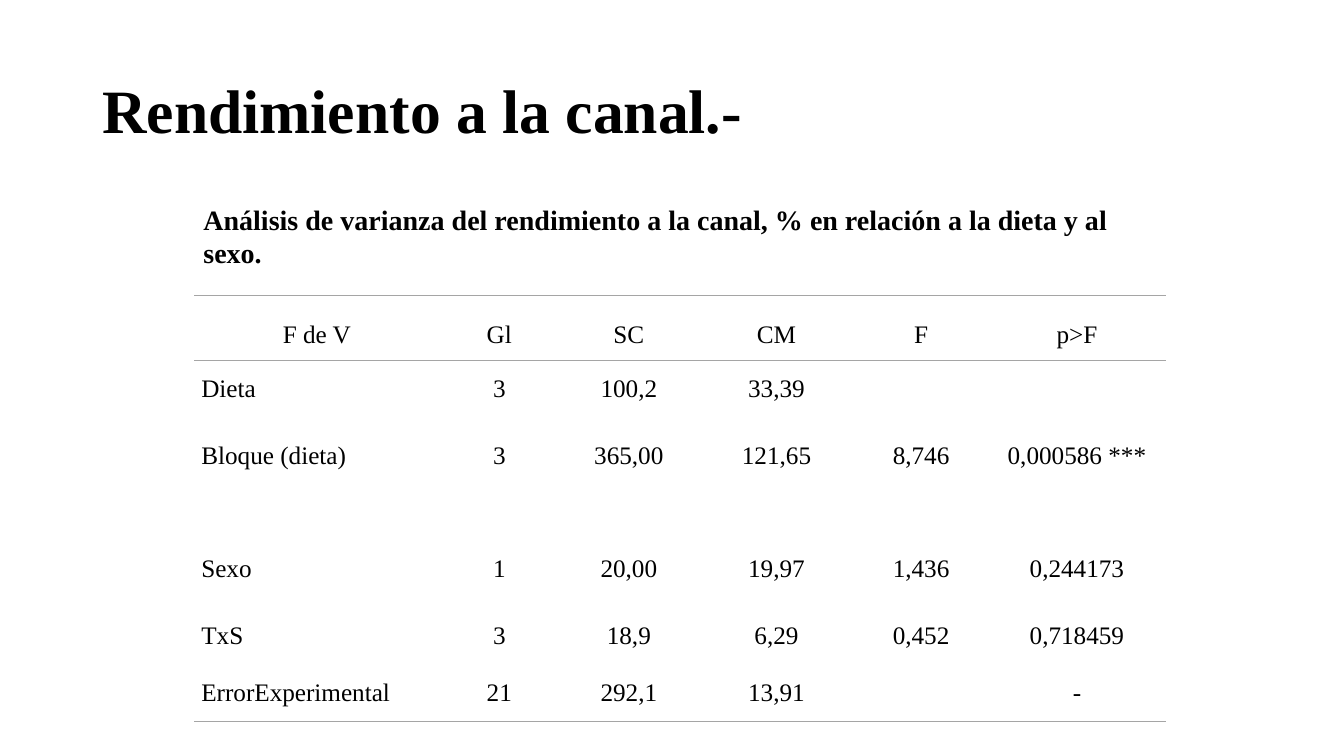
from lxml.etree import SubElement
from pptx import Presentation
from pptx.dml.color import RGBColor
from pptx.enum.text import MSO_ANCHOR as Anchor, PP_ALIGN as Align
from pptx.oxml.ns import qn
from pptx.util import Pt

TITLE = "Rendimiento a la canal.-"
CAPTION = ("Análisis de varianza del rendimiento a la canal, % "
           "en relación a la dieta y al sexo.")
ANOVA = [
    ("F de V", "Gl", "SC", "CM", "F", "p>F"),
    ("Dieta", "3", "100,2", "33,39", "", ""),
    ("Bloque (dieta)", "3", "365,00", "121,65", "8,746", "0,000586 ***"),
    ("Sexo", "1", "20,00", "19,97", "1,436", "0,244173"),
    ("TxS", "3", "18,9", "6,29", "0,452", "0,718459"),
    ("ErrorExperimental", "21", "292,1", "13,91", "", "-"),
]
COL_WIDTHS = (175, 85.7, 99.4, 111.6, 95, 127.6)
ROW_HEIGHTS = (46.8, 48.2, 80.6, 48.2, 40.3, 40.3)
TITLE_BOX = (66, 28.8, 828, 104.4)
CAPTION_BOX = (138.2, 141, 694.8, 55.4)
TABLE_AT = (138.8, 210.8)

THEME = {
    "font": "Times New Roman", "text": "000000", "rule": "A5A5A5",
    "title": 44, "caption": 20, "cell": 18, "rule_width": 1,
}


def write(tf, text, size, bold=False, align=Align.LEFT, spacing=1.0):
    p = tf.paragraphs[0]
    p.alignment, p.line_spacing = align, spacing
    r = p.add_run()
    r.text = text
    font = {"name": THEME["font"], "size": Pt(THEME[size]), "bold": bold}
    for name, value in font.items():
        setattr(r.font, name, value)
    r.font.color.rgb = RGBColor.from_string(THEME["text"])


def add_text(s, box, text, size, anchor, spacing):
    tf = s.shapes.add_textbox(*map(Pt, box)).text_frame
    tf.word_wrap, tf.vertical_anchor = True, anchor
    write(tf, text, size, True, spacing=spacing)


def set_borders(cell, ruled):
    """Draw a rule on the sides in ruled (T, B) and clear the other sides."""
    tc_pr = cell._tc.get_or_add_tcPr()
    for i, side in enumerate("LRTB"):
        ln = SubElement(tc_pr, qn(f"a:ln{side}"))
        tc_pr.insert(i, ln)
        if side in ruled:
            ln.set("w", str(Pt(THEME["rule_width"])))
            fill = SubElement(ln, qn("a:solidFill"))
            SubElement(fill, qn("a:srgbClr")).set("val", THEME["rule"])
        else:
            SubElement(ln, qn("a:noFill"))


def add_anova(s):
    size = (sum(COL_WIDTHS), sum(ROW_HEIGHTS))
    table = s.shapes.add_table(len(ANOVA), len(COL_WIDTHS),
                               *map(Pt, TABLE_AT + size)).table
    table.first_row = table.horz_banding = False
    for column, width in zip(table.columns, COL_WIDTHS):
        column.width = Pt(width)
    margins = {"margin_left": Pt(5), "margin_right": Pt(5),
               "margin_top": 0, "margin_bottom": 0}
    sides = {0: "TB", 1: "T", len(ANOVA) - 1: "B"}
    for i, (row, height) in enumerate(zip(ANOVA, ROW_HEIGHTS)):
        table.rows[i].height = Pt(height)
        for j, text in enumerate(row):
            cell = table.cell(i, j)
            for name, value in margins.items():
                setattr(cell, name, value)
            cell.vertical_anchor = Anchor.TOP if i else Anchor.MIDDLE
            cell.fill.background()
            set_borders(cell, sides.get(i, ""))
            if text:
                align = Align.LEFT if i and not j else Align.CENTER
                write(cell.text_frame, text, "cell", align=align, spacing=1.5)


def main():
    prs = Presentation()
    prs.slide_width, prs.slide_height = Pt(960), Pt(540)
    s = prs.slides.add_slide(prs.slide_layouts[6])
    add_text(s, TITLE_BOX, TITLE, "title", Anchor.MIDDLE, 0.9)
    add_anova(s)
    add_text(s, CAPTION_BOX, CAPTION, "caption", Anchor.TOP, 1.0)
    prs.save("out.pptx")


if __name__ == "__main__":
    main()
